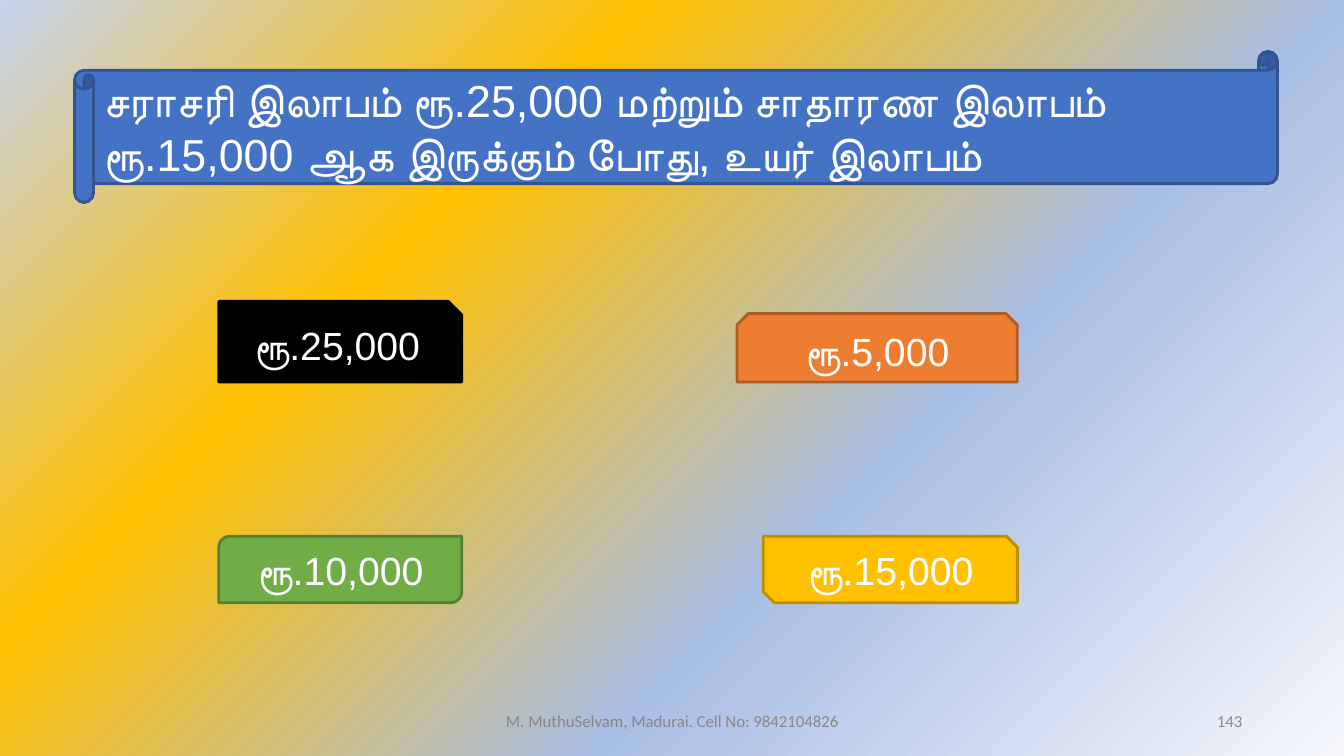
from lxml.etree import SubElement
from pptx import Presentation
from pptx.dml.color import RGBColor
from pptx.enum.shapes import MSO_SHAPE
from pptx.enum.text import MSO_ANCHOR, PP_ALIGN
from pptx.oxml.ns import qn
from pptx.util import Inches, Pt

WIDTH, HEIGHT = 13.33, 7.5
QUESTION = "சராசரி இலாபம் ரூ.25,000 மற்றும் சாதாரண இலாபம் ரூ.15,000 ஆக இருக்கும் போது, உயர் இலாபம்"
LEFT_EDGE, RIGHT_EDGE = 2.17, 10.09
ROW_BOTTOMS = [3.79, 5.98]
ANSWERS = [
    ("ரூ.25,000", 0, 0, 2.41, 0.8, MSO_SHAPE.SNIP_1_RECTANGLE, "000000", "000000"),
    ("ரூ.5,000", 0, 1, 2.78, 0.68, MSO_SHAPE.SNIP_2_SAME_RECTANGLE, "ED7D31", "AF5C24"),
    ("ரூ.15,000", 1, 1, 2.52, 0.66, MSO_SHAPE.SNIP_2_DIAG_RECTANGLE, "FFC000", "BD8E00"),
    ("ரூ.10,000", 1, 0, 2.41, 0.66, MSO_SHAPE.ROUND_2_DIAG_RECTANGLE, "70AD47", "538035"),
]
FOOTERS = [
    ("M. MuthuSelvam, Madurai. Cell No: 9842104826", 4.42, 4.5, PP_ALIGN.CENTER),
    ("143", 9.42, 3, PP_ALIGN.RIGHT),
]
BACKGROUND = [(0, "C5D3ED"), (31, "FFC000"), (64, "A9BEE4"), (100, "F5F7FC")]


def colour(value):
    return RGBColor.from_string(value)


def paint_background(page):
    fill = page.background.fill
    fill.gradient()
    fill.gradient_angle = 315
    stops = fill.gradient_stops[0]._gs.getparent()
    for stop in list(stops):
        stops.remove(stop)
    for share, value in BACKGROUND:
        stop = SubElement(stops, qn("a:gs"), pos=str(share * 1000))
        SubElement(stop, qn("a:srgbClr"), val=value)


def write(box, text, size, font, value, align):
    frame = box.text_frame
    frame.word_wrap = True
    frame.vertical_anchor = MSO_ANCHOR.MIDDLE
    para = frame.paragraphs[0]
    para.alignment = align
    span = para.add_run()
    span.text = text
    span.font.size = Pt(size)
    span.font.name = font
    span.font.color.rgb = colour(value)


def add_panel(page, kind, place, fill, line, text, size, align):
    panel = page.shapes.add_shape(kind, *map(Inches, place))
    panel.shadow.inherit = False
    panel.fill.solid()
    panel.fill.fore_color.rgb = colour(fill)
    panel.line.color.rgb = colour(line)
    panel.line.width = Pt(2)
    write(panel, text, size, "Arial", "FFFFFF", align)


def main():
    deck = Presentation()
    deck.slide_width, deck.slide_height = Inches(WIDTH), Inches(HEIGHT)
    page = deck.slides.add_slide(deck.slide_layouts[6])
    paint_background(page)
    add_panel(page, MSO_SHAPE.HORIZONTAL_SCROLL, (0.74, 0.51, 11.93, 1.5),
              "4472C4", "325491", QUESTION, 32, PP_ALIGN.LEFT)
    for text, row, column, width, height, kind, fill, line in ANSWERS:
        left = RIGHT_EDGE - width if column else LEFT_EDGE
        place = (left, ROW_BOTTOMS[row] - height, width, height)
        add_panel(page, kind, place, fill, line, text, 28, PP_ALIGN.CENTER)
    for text, left, width, align in FOOTERS:
        box = page.shapes.add_textbox(*map(Inches, (left, 6.95, width, 0.4)))
        write(box, text, 12, "Calibri", "888888", align)
    deck.save("out.pptx")


if __name__ == "__main__":
    main()
